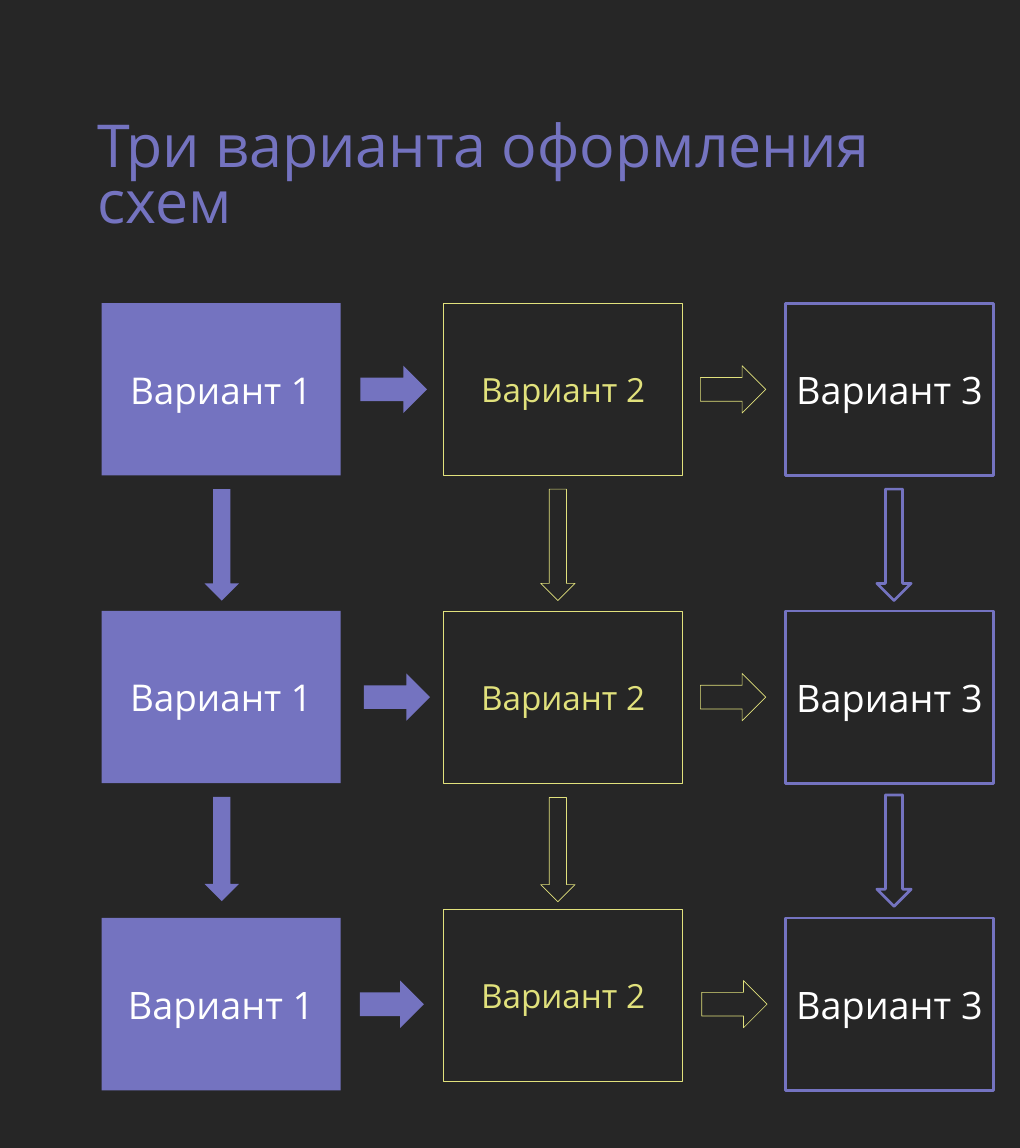
from dataclasses import dataclass

from lxml.etree import SubElement
from pptx import Presentation
from pptx.dml.color import RGBColor
from pptx.enum.shapes import MSO_SHAPE
from pptx.enum.text import MSO_ANCHOR, PP_ALIGN
from pptx.oxml.ns import qn
from pptx.shapes.autoshape import Shape
from pptx.slide import Slide
from pptx.text.text import TextFrame
from pptx.util import Inches, Pt

BACKGROUND = RGBColor(0x26, 0x26, 0x26)
VIOLET = RGBColor(0x74, 0x73, 0xC0)
YELLOW = RGBColor(0xE1, 0xE1, 0x7C)
WHITE = RGBColor(0xFF, 0xFF, 0xFF)
FONT = "Open Sans"

ROW_TOPS = (4.68, 9.43, 14.17)
BOX_HEIGHT = 2.66
DOWN_LEFT, DOWN_PITCH, DOWN_WIDTH = 3.16, 5.19, 0.53
RIGHT_WIDTH = 0.73


@dataclass(frozen=True)
class Look:
    color: RGBColor
    line_width: float = 0  # zero means a solid fill without an outline


@dataclass(frozen=True)
class Column:
    label: str
    left: float
    width: float
    look: Look
    text_color: RGBColor
    text_sizes: tuple[float, ...]
    box_tops: tuple[float, ...]
    down_arrows: tuple[tuple[float, float], ...]  # top, length
    right_arrows: tuple[tuple[float, float], ...] = ()  # centre, length


SOLID = Look(VIOLET)
THIN = Look(YELLOW, 0.75)
THICK = Look(VIOLET, 3)

COLUMNS = (
    Column("Вариант 1", 1.57, 3.69, SOLID, WHITE, (41, 41, 42), ROW_TOPS,
           ((7.55, 1.72), (12.3, 1.61)),
           ((6.08, 1.03), (6.13, 1.02), (6.05, 0.99))),
    Column("Вариант 2", 6.85, 3.69, THIN, YELLOW, (37, 37, 37), (4.68, 9.43, 14.03),
           ((7.55, 1.72), (12.31, 1.61)),
           ((11.32, 1.01), (11.32, 1.01), (11.34, 1.01))),
    Column("Вариант 3", 12.13, 3.21, THICK, WHITE, (42, 42, 42), ROW_TOPS,
           ((7.55, 1.72), (12.27, 1.72))),
)


def write_text(tf: TextFrame, text: str, size: float, color: RGBColor) -> None:
    tf.word_wrap = True
    tf.text = text
    font = tf.paragraphs[0].runs[0].font
    font.name, font.size = FONT, Pt(size)
    font.color.rgb = color


def add_figure(s: Slide, kind: MSO_SHAPE, left: float, top: float,
               width: float, height: float, look: Look) -> Shape:
    sp = s.shapes.add_shape(kind, Inches(left), Inches(top), Inches(width), Inches(height))
    sp.shadow.inherit = False
    if look.line_width:
        sp.fill.background()
        sp.line.color.rgb = look.color
        sp.line.width = Pt(look.line_width)
        SubElement(sp.line._get_or_add_ln(), qn("a:round"))
    else:
        sp.fill.solid()
        sp.fill.fore_color.rgb = look.color
        sp.line.fill.background()
    return sp


def add_box(s: Slide, column: Column, top: float, size: float) -> None:
    sp = add_figure(s, MSO_SHAPE.RECTANGLE, column.left, top, column.width, BOX_HEIGHT, column.look)
    tf = sp.text_frame
    tf.margin_left = tf.margin_right = tf.margin_top = tf.margin_bottom = Inches(0.08)
    tf.vertical_anchor = MSO_ANCHOR.MIDDLE
    write_text(tf, column.label, size, column.text_color)
    tf.paragraphs[0].alignment = PP_ALIGN.CENTER


def add_right_arrow(s: Slide, center: float, row_top: float, length: float, look: Look) -> None:
    """Turn a down arrow to the right, centred on its row."""
    middle = row_top + BOX_HEIGHT / 2
    sp = add_figure(s, MSO_SHAPE.DOWN_ARROW, center - RIGHT_WIDTH / 2, middle - length / 2,
                    RIGHT_WIDTH, length, look)
    sp.rotation = 270


def add_title(s: Slide) -> None:
    sp = s.shapes.add_textbox(Inches(1.4), Inches(2.27), Inches(13.58), Inches(1.41))
    tf = sp.text_frame
    tf.vertical_anchor = MSO_ANCHOR.BOTTOM
    write_text(tf, "Три варианта оформления схем", 65.7, VIOLET)
    tf.paragraphs[0].line_spacing = 0.8


def main() -> None:
    prs = Presentation()
    prs.slide_width, prs.slide_height = Inches(15.75), Inches(17.72)
    s = prs.slides.add_slide(prs.slide_layouts[6])
    s.background.fill.solid()
    s.background.fill.fore_color.rgb = BACKGROUND

    add_title(s)
    for index, column in enumerate(COLUMNS):
        for top, size in zip(column.box_tops, column.text_sizes):
            add_box(s, column, top, size)
        for top, length in column.down_arrows:
            add_figure(s, MSO_SHAPE.DOWN_ARROW, DOWN_LEFT + index * DOWN_PITCH, top,
                       DOWN_WIDTH, length, column.look)
        for row_top, (center, length) in zip(ROW_TOPS, column.right_arrows):
            add_right_arrow(s, center, row_top, length, column.look)

    prs.save("out.pptx")


if __name__ == "__main__":
    main()
